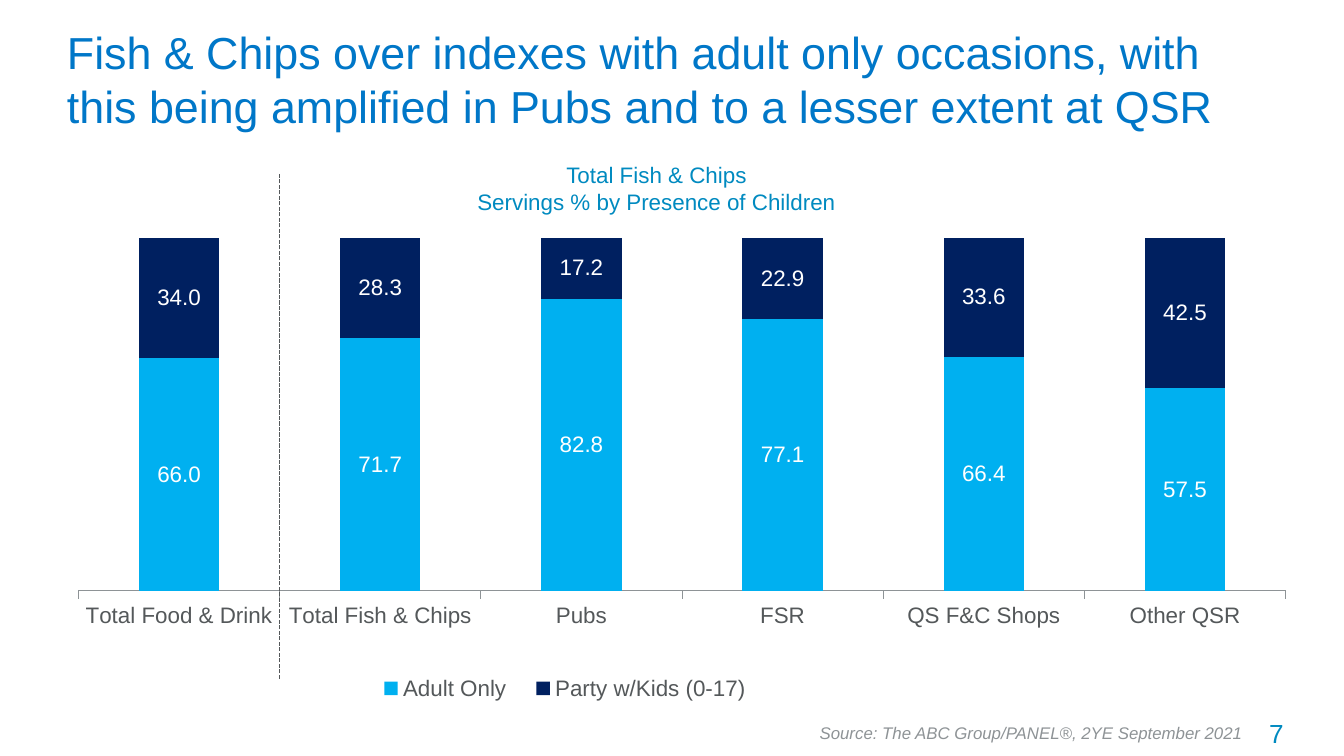
"""Build the slide on fish and chips servings by presence of children."""
from lxml import etree
from pptx import Presentation
from pptx import util as u
from pptx.chart.data import CategoryChartData
from pptx.dml.color import RGBColor
from pptx.enum import chart as ch, dml, shapes, text
from pptx.oxml import parse_xml
from pptx.oxml.ns import qn

BLUE = RGBColor(0x00, 0x77, 0xC8)
TEAL = RGBColor(0x00, 0x8A, 0xC0)
SLATE = RGBColor(0x54, 0x58, 0x5A)
GREY = RGBColor(0x8E, 0x93, 0x96)
SKY = RGBColor(0x00, 0xB0, 0xF0)
NAVY = RGBColor(0x00, 0x20, 0x60)
WHITE = RGBColor(0xFF, 0xFF, 0xFF)
C_NS = "http://schemas.openxmlformats.org/drawingml/2006/chart"


def set_font(font, color, **values):
    font.color.rgb = color
    for name, value in {"name": "Arial", **values}.items():
        setattr(font, name, value)


def add_layout(parent, index, **values):
    target = '<c:layoutTarget val="inner"/>' if index == 0 else ""
    modes = '<c:xMode val="edge"/><c:yMode val="edge"/>'
    sizes = "".join(f'<c:{k} val="{v}"/>' for k, v in values.items())
    for old in parent.findall(qn("c:layout")):
        parent.remove(old)
    parent.insert(index, parse_xml(
        f'<c:layout xmlns:c="{C_NS}"><c:manualLayout>{target}{modes}{sizes}'
        "</c:manualLayout></c:layout>"))


prs = Presentation()
prs.slide_width = u.Inches(10)
prs.slide_height = prs.slide_width * 9 // 16
s = prs.slides.add_slide(prs.slide_layouts[6])

LEFT, CENTER, RIGHT = text.PP_ALIGN.LEFT, text.PP_ALIGN.CENTER, text.PP_ALIGN.RIGHT
TOP, MIDDLE = text.MSO_ANCHOR.TOP, text.MSO_ANCHOR.MIDDLE
texts = [
    ((3.44, 1.15, 2.89, 0.51), ["Total Fish & Chips", "Servings % by Presence of Children"],
     TEAL, {"size": u.Pt(12)}, CENTER, {"word_wrap": False, "vertical_anchor": TOP}),
    ((8.85, 5.29, 0.8, 0.34), ["7"],
     TEAL, {"size": u.Pt(14)}, RIGHT, {"word_wrap": True, "vertical_anchor": TOP}),
    ((0.4, 0.23, 9.17, 0.71),
     ["Fish & Chips over indexes with adult only occasions, with this being "
      "amplified in Pubs and to a lesser extent at QSR"],
     BLUE, {"size": u.Pt(24)}, LEFT, {"word_wrap": True, "vertical_anchor": MIDDLE}),
    ((6, 5.33, 3.41, 0.25), ["Source: The ABC Group/PANEL®, 2YE September 2021"],
     GREY, {"size": u.Pt(9), "italic": True}, LEFT,
     {"word_wrap": False, "vertical_anchor": TOP}),
]
for box, lines, color, font, align, frame in texts:
    tf = s.shapes.add_textbox(*map(u.Inches, box)).text_frame
    for name, value in frame.items():
        setattr(tf, name, value)
    for i, line in enumerate(lines):
        p = tf.add_paragraph() if i else tf.paragraphs[0]
        p.alignment = align
        r = p.add_run()
        r.text = line
        set_font(r.font, color, **font)

data = CategoryChartData(number_format="#,##0.0")
data.categories = ["Total Food & Drink", "Total Fish & Chips", "Pubs", "FSR",
                   "QS F&C Shops", "Other QSR"]
data.add_series("Adult Only", [66, 71.7, 82.8, 77.1, 66.4, 57.5])
data.add_series("Party w/Kids (0-17)", [34, 28.3, 17.2, 22.9, 33.6, 42.5])
chart = s.shapes.add_chart(
    ch.XL_CHART_TYPE.COLUMN_STACKED_100,
    *map(u.Inches, (0.4, 1.34, 9.17, 3.92)), data).chart
set_font(chart.font, SLATE, size=u.Pt(12))
chart.has_title = False

chart.has_legend = True
legend = chart.legend
legend.position = ch.XL_LEGEND_POSITION.BOTTOM
legend.include_in_layout = False
add_layout(legend._element, 1, x=0.25, y=0.93, w=0.33, h=0.07)

cat, val = chart.category_axis, chart.value_axis
cat.major_tick_mark = ch.XL_TICK_MARK.OUTSIDE
cat.format.line.color.rgb = GREY
cat.format.line.width = u.Pt(0.5)
val.visible = val.has_major_gridlines = False

plot = chart.plots[0]
plot.gap_width, plot.overlap = 150, 100
plot.vary_by_categories = False
add_layout(chart._chartSpace.chart.plotArea, 0, x=0.02, y=0.11, w=0.98, h=0.67)
for series, color in zip(plot.series, (SKY, NAVY)):
    series.format.fill.solid()
    series.format.fill.fore_color.rgb = color
    labels = series.data_labels
    for name, value in {"show_value": True, "number_format": "#,##0.0",
                        "number_format_is_linked": False}.items():
        setattr(labels, name, value)
    set_font(labels.font, WHITE, size=u.Pt(12))

divider = s.shapes.add_connector(
    shapes.MSO_CONNECTOR.STRAIGHT, *map(u.Inches, (2.08, 5.05, 2.08, 1.29)))
divider.line.color.rgb = SLATE
for name, value in {"width": u.Pt(0.75), "dash_style": dml.MSO_LINE.SQUARE_DOT}.items():
    setattr(divider.line, name, value)
etree.SubElement(divider._element.spPr, qn("a:effectLst"))

prs.save("out.pptx")
